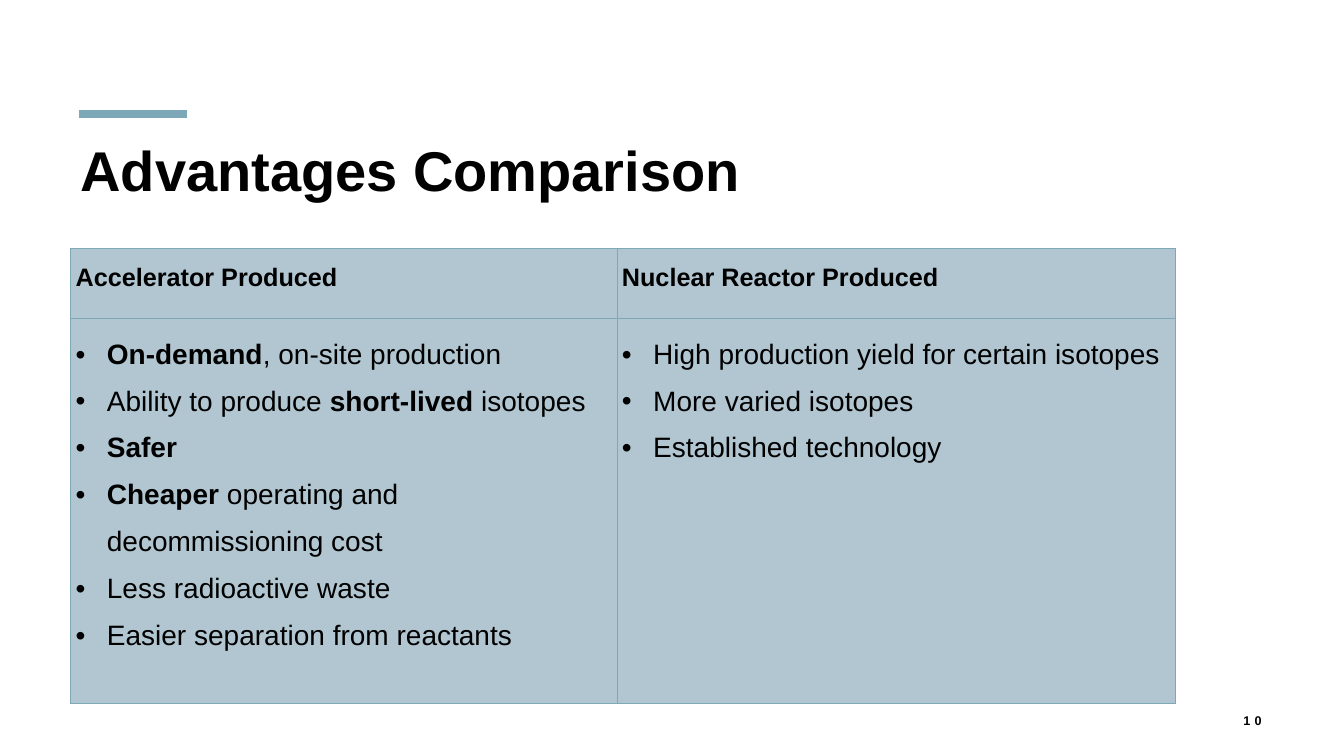
from pptx import Presentation
from pptx.dml.color import RGBColor
from pptx.enum.shapes import MSO_CONNECTOR
from pptx.enum.text import MSO_ANCHOR, PP_ALIGN
from pptx.oxml.ns import qn
from pptx.util import Inches, Pt
from lxml.etree import SubElement

theme = dict(font="Arial", ink="000000", rule="7CA8B8", fill="B1C6D1",
             title=40, head=18, body=20, page=9)

deck = Presentation()
deck.slide_width, deck.slide_height = Inches(13.33), Inches(7.5)
slide = deck.slides.add_slide(deck.slide_layouts[6])
col, row = deck.slide_width / 100, deck.slide_height / 100


def grid(x, y, w, h):
    return int(x * col), int(y * row), int(w * col), int(h * row)


def write(frame, text, size, bold=False, align=None, lead=None, bullet=False, track=0):
    for i, line in enumerate(text.split("\n")):
        para = frame.paragraphs[0] if i == 0 else frame.add_paragraph()
        para.alignment, para.line_spacing = align, lead
        if bullet:
            props = para._p.get_or_add_pPr()
            props.set("marL", str(Inches(0.31)))
            props.set("indent", str(-Inches(0.31)))
            SubElement(props, qn("a:buFont"), typeface=theme["font"])
            SubElement(props, qn("a:buChar"), char="•")
        for j, part in enumerate(line.split("*")):
            if part:
                run = para.add_run()
                run.text = part
                font = run.font
                font.name, font.size = theme["font"], Pt(size)
                font.bold = bold or j % 2 == 1
                font.color.rgb = RGBColor.from_string(theme["ink"])
                if track:
                    run._r.get_or_add_rPr().set("spc", str(track * 100))


x, y, w, _ = grid(5.85, 15.05, 8.05, 0)
bar = slide.shapes.add_connector(MSO_CONNECTOR.STRAIGHT, x, y, x + w, y)
bar.line.color.rgb = RGBColor.from_string(theme["rule"])
bar.line.width = Pt(6)
SubElement(bar._element.spPr, qn("a:effectLst"))

title = slide.shapes.add_textbox(*grid(5.25, 17.33, 89.35, 16)).text_frame
title.word_wrap = True
write(title, "Advantages Comparison", theme["title"], bold=True)

heads = ["Accelerator Produced", "Nuclear Reactor Produced"]
lists = [
    "*On-demand*, on-site production\n"
    "Ability to produce *short-lived* isotopes\n"
    "*Safer*\n"
    "*Cheaper* operating and decommissioning cost\n"
    "Less radioactive waste\n"
    "Easier separation from reactants",
    "High production yield for certain isotopes\n"
    "More varied isotopes\n"
    "Established technology",
]
wide, tall = [40.65, 41.56], [9.2, 51]
table = slide.shapes.add_table(
    2, 2, *grid(5.25, 32.9, sum(wide), sum(tall))).table
for i in range(2):
    table.columns[i].width = int(wide[i] * col)
    table.rows[i].height = int(tall[i] * row)

for r, texts in enumerate([heads, lists]):
    for c, text in enumerate(texts):
        cell = table.cell(r, c)
        cell.margin_left = cell.margin_right = cell.margin_bottom = Inches(0.05)
        cell.margin_top = Inches(0.05 if r else 0.22)
        props = cell._tc.get_or_add_tcPr()
        for side in ["a:lnL", "a:lnR", "a:lnT", "a:lnB"]:
            edge = SubElement(props, qn(side), w=str(Pt(0.5)))
            paint = SubElement(edge, qn("a:solidFill"))
            SubElement(paint, qn("a:srgbClr"), val=theme["rule"])
        cell.fill.solid()
        cell.fill.fore_color.rgb = RGBColor.from_string(theme["fill"])
        if r == 0:
            write(cell.text_frame, text, theme["head"], bold=True, lead=Pt(15))
        else:
            write(cell.text_frame, text, theme["body"], lead=1.5, bullet=True)

page = slide.shapes.add_textbox(*grid(88.65, 92.67, 5.95, 5.33)).text_frame
page.word_wrap = True
page.vertical_anchor = MSO_ANCHOR.MIDDLE
write(page, "10", theme["page"], bold=True, align=PP_ALIGN.RIGHT, track=3)

deck.save("out.pptx")
